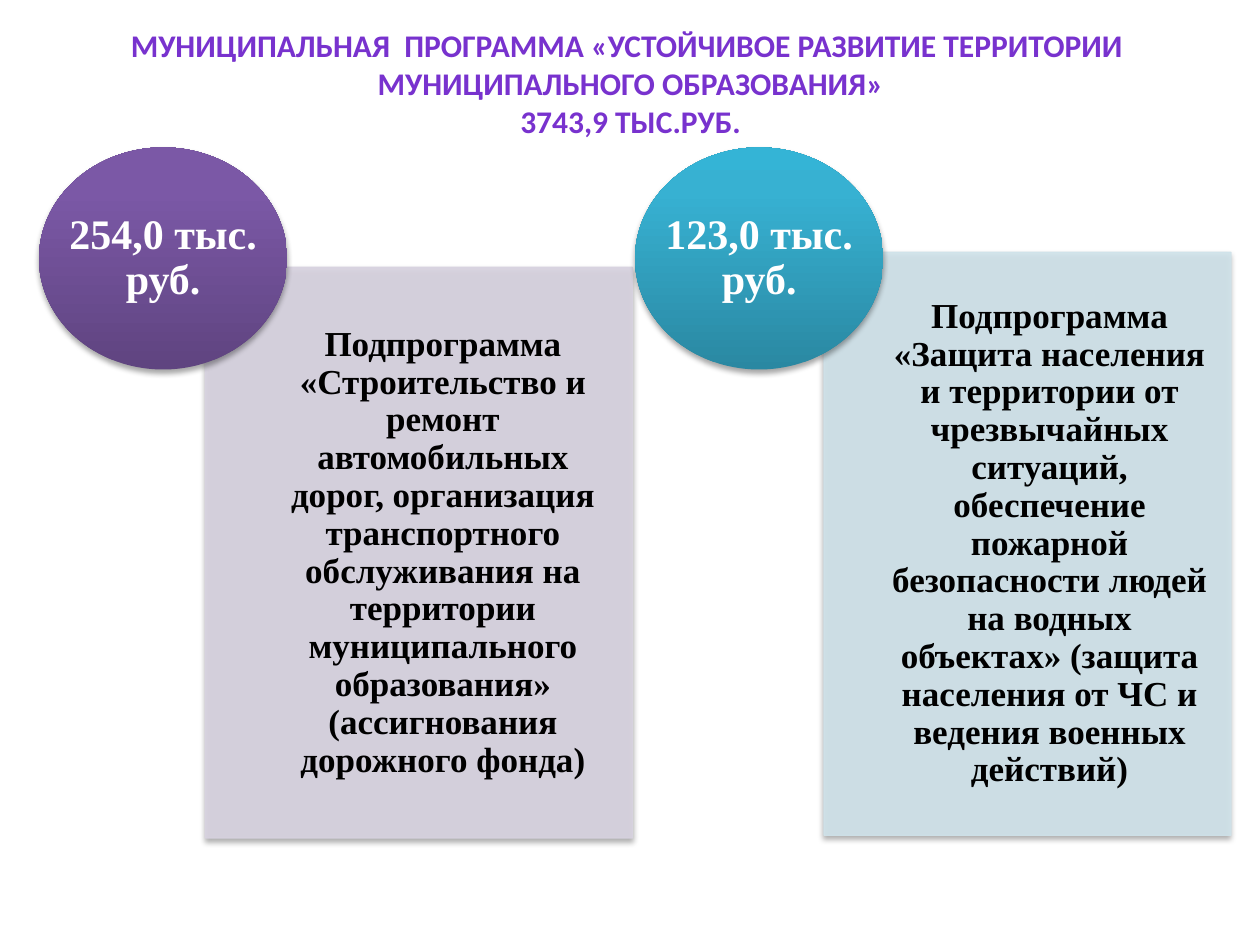
from dataclasses import dataclass

from lxml import etree
from pptx import Presentation
from pptx.dml.color import RGBColor
from pptx.enum.shapes import MSO_SHAPE
from pptx.enum.text import MSO_ANCHOR, MSO_AUTO_SIZE, PP_ALIGN
from pptx.oxml.ns import qn
from pptx.util import Inches, Pt

RECT, OVAL = MSO_SHAPE.RECTANGLE, MSO_SHAPE.OVAL
TOP, MIDDLE = MSO_ANCHOR.TOP, MSO_ANCHOR.MIDDLE
CENTER = PP_ALIGN.CENTER
GROW = MSO_AUTO_SIZE.SHAPE_TO_FIT_TEXT

W, H = 10, 7.5
SERIF = "Times New Roman"
COLORS = {
    "title": "7832CE",
    "text": "000000",
    "light": "FFFFFF",
    "shadow": "000000",
    "purple_panel": "D8D3E0",
    "blue_panel": "D0E3EA",
}
GRADIENTS = {
    "purple": ((0, "5F4480"), (80, "7B58A6"), (100, "7C57A8")),
    "blue": ((0, "2A88A2"), (80, "37B1D2"), (100, "34B4D6")),
}
TITLE = (
    "МУНИЦИПАЛЬНАЯ  ПРОГРАММА «УСТОЙЧИВОЕ РАЗВИТИЕ ТЕРРИТОРИИ ",
    "МУНИЦИПАЛЬНОГО ОБРАЗОВАНИЯ»",
    "3743,9 ТЫС.РУБ.",
)


@dataclass
class Box:
    x: float
    y: float
    w: float
    h: float

    def emu(self) -> tuple:
        return (Inches(self.x * W), Inches(self.y * H),
                Inches(self.w * W), Inches(self.h * H))


@dataclass
class Subprogram:
    hue: str
    amount: str
    name: str
    circle_x: float
    panel: Box
    indent: float


SUBPROGRAMS = (
    Subprogram("purple", "254,0 тыс. руб.",
               "Подпрограмма «Строительство и ремонт автомобильных дорог, "
               "организация транспортного обслуживания на территории "
               "муниципального образования» (ассигнования дорожного фонда)",
               0.031, Box(0.163, 0.283, 0.339, 0.604), 0.054),
    Subprogram("blue", "123,0 тыс. руб.",
               "Подпрограмма «Защита населения и территории от чрезвычайных "
               "ситуаций, обеспечение пожарной безопасности людей на водных "
               "объектах» (защита населения от ЧС и ведения военных действий)",
               0.504, Box(0.654, 0.267, 0.323, 0.617), 0.051),
)


def add_color(parent, color: str, alpha: int = 100) -> None:
    clr = etree.SubElement(parent, qn("a:srgbClr"), val=color)
    if alpha < 100:
        etree.SubElement(clr, qn("a:alpha"), val=str(alpha * 1000))


def set_alpha(fill_el, alpha: int) -> None:
    clr = fill_el.find(qn("a:srgbClr"))
    etree.SubElement(clr, qn("a:alpha"), val=str(alpha * 1000))


def add_shadowed(shapes, kind, box: Box):
    sp = shapes.add_shape(kind, *box.emu())
    sp.shadow.inherit = False
    effects = sp._element.spPr.find(qn("a:effectLst"))
    shadow = etree.SubElement(effects, qn("a:outerShdw"), blurRad=str(Pt(3.1)),
                              dist=str(Pt(1.8)), dir="5400000", rotWithShape="0")
    add_color(shadow, COLORS["shadow"], 35)
    return sp


def add_panel(shapes, box: Box, color: str) -> None:
    sp = add_shadowed(shapes, RECT, box)
    sp.line.width = Pt(0.75)
    for fill in (sp.fill, sp.line.fill):
        fill.solid()
        fill.fore_color.rgb = RGBColor.from_string(color)
    for fill_el in sp._element.spPr.iter(qn("a:solidFill")):
        set_alpha(fill_el, 90)


def add_circle(shapes, box: Box, stops: tuple) -> None:
    sp = add_shadowed(shapes, OVAL, box)
    sp.line.fill.background()
    sp.fill.gradient()
    sp.fill.gradient_angle = 90
    gs_lst = next(sp._element.spPr.iter(qn("a:gsLst")))
    for gs in list(gs_lst):
        gs_lst.remove(gs)
    for pos, color in stops:
        gs = etree.SubElement(gs_lst, qn("a:gs"), pos=str(pos * 1000))
        add_color(gs, color)


def write(tf, lines: tuple, *, font: str, size: int, color: str,
          anchor=MIDDLE, spacing: float = 0.9, insets: tuple = (0, 0, 0, 0)) -> None:
    tf.word_wrap = True
    tf.vertical_anchor = anchor
    tf.margin_left, tf.margin_top, tf.margin_right, tf.margin_bottom = map(Inches, insets)
    for i, text in enumerate(lines):
        p = tf.paragraphs[0] if i == 0 else tf.add_paragraph()
        p.alignment = CENTER
        p.line_spacing = spacing
        p.space_before = Pt(0)
        r = p.add_run()
        r.text = text
        r.font.name = font
        r.font.size = Pt(size)
        r.font.bold = True
        r.font.color.rgb = RGBColor.from_string(color)


def add_subprogram(shapes, sub: Subprogram) -> None:
    panel = sub.panel
    add_panel(shapes, panel, COLORS[f"{sub.hue}_panel"])
    body = Box(panel.x + sub.indent, panel.y, panel.w - sub.indent, panel.h)
    write(shapes.add_textbox(*body.emu()).text_frame, (sub.name,), font=SERIF,
          size=20, color=COLORS["text"], insets=(0, 0.16, 0.16, 0.16))
    circle = Box(sub.circle_x, 0.156, 0.197, 0.235)
    add_circle(shapes, circle, GRADIENTS[sub.hue])
    write(shapes.add_textbox(*circle.emu()).text_frame, (sub.amount,), font=SERIF,
          size=24, color=COLORS["light"])


def main() -> None:
    prs = Presentation()
    prs.slide_width, prs.slide_height = Inches(W), Inches(H)
    s = prs.slides.add_slide(prs.slide_layouts[5])
    title = s.shapes.title
    title.left, title.top, title.width, title.height = Box(0.016, 0.021, 0.969, 0.135).emu()
    write(title.text_frame, TITLE, font="Calibri", size=18, color=COLORS["title"],
          anchor=TOP, spacing=1.0, insets=(0.1, 0.05, 0.1, 0.05))
    title.text_frame.auto_size = GROW
    for sub in SUBPROGRAMS:
        add_subprogram(s.shapes, sub)
    prs.save("out.pptx")


if __name__ == "__main__":
    main()
